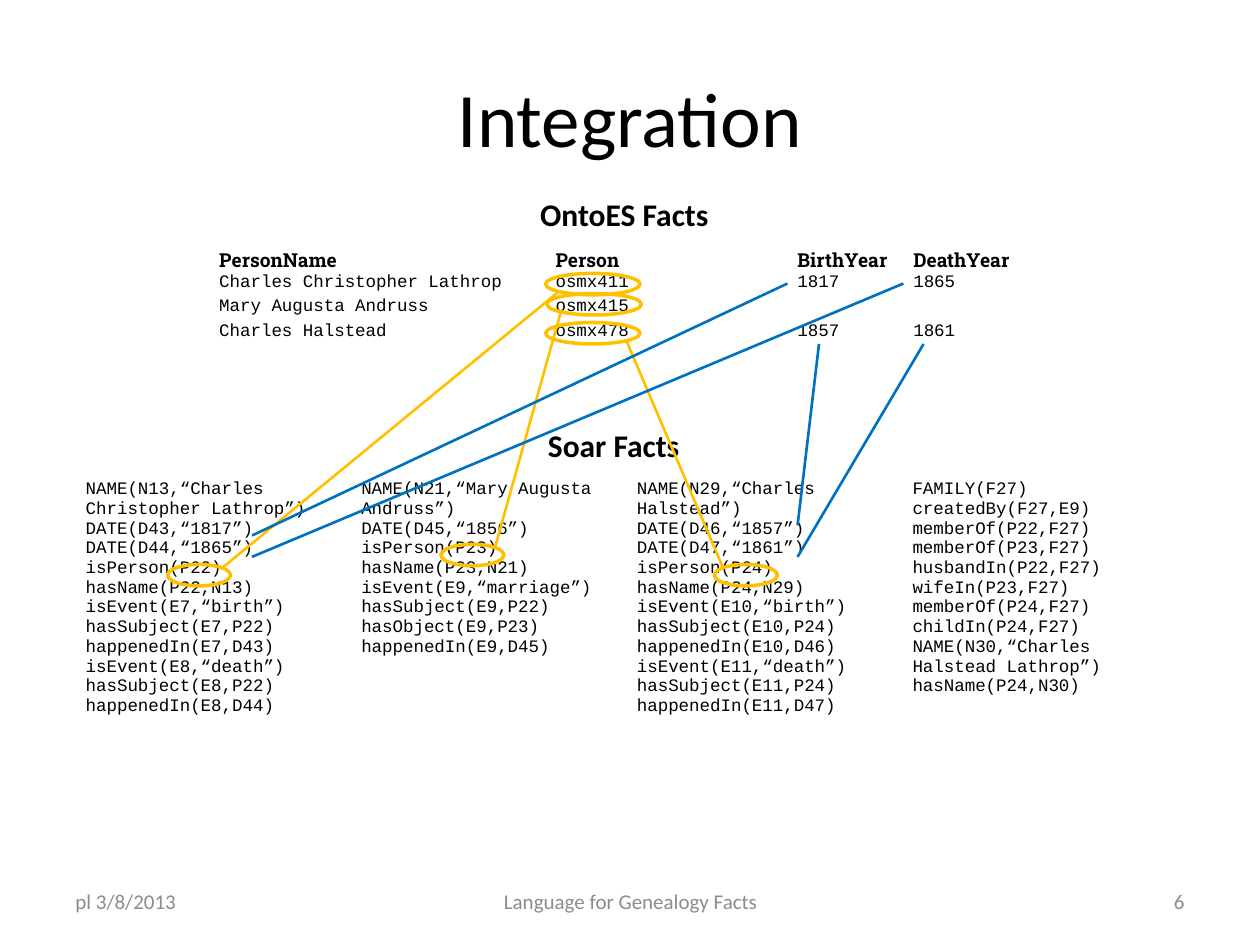
from dataclasses import dataclass

from lxml.etree import SubElement
from pptx import Presentation
from pptx.dml.color import RGBColor
from pptx.enum.shapes import MSO_CONNECTOR, MSO_SHAPE
from pptx.enum.text import MSO_ANCHOR, PP_ALIGN
from pptx.oxml.ns import qn
from pptx.util import Inches, Pt


@dataclass(frozen=True)
class Theme:
    sans: str = "Calibri"
    slab: str = "Roboto Slab"
    mono: str = "Courier New"
    ink: str = "000000"
    gray: str = "8C8C8C"
    gold: str = "FFC000"
    blue: str = "0070C0"
    title: int = 44
    head: int = 18
    foot: int = 12
    label: int = 11
    fact: int = 10
    ring: float = 2
    link: float = 1.5
    grid: str = "{2D5ABB26-0587-4C30-8999-92F81FD0307C}"


class Page:
    def __init__(self, slide, theme):
        self.slide = slide
        self.theme = theme

    def style(self, para, face, size, color, bold=False):
        font = para.font
        font.name = face
        font.size = Pt(size)
        font.bold = bold
        font.color.rgb = RGBColor.from_string(color)

    def text(self, words, box, size, color, align=PP_ALIGN.CENTER,
             anchor=MSO_ANCHOR.MIDDLE, bold=False):
        frame = self.slide.shapes.add_textbox(*map(Inches, box)).text_frame
        frame.word_wrap = True
        frame.vertical_anchor = anchor
        frame.text = words
        para = frame.paragraphs[0]
        para.alignment = align
        self.style(para, self.theme.sans, size, color, bold)

    def table(self, box, cols, rows):
        shape = self.slide.shapes.add_table(len(rows), len(cols), *map(Inches, box))
        table = shape.table
        table.first_row = table.horz_banding = False
        table._tbl.tblPr.find(qn("a:tableStyleId")).text = self.theme.grid
        for col, width in zip(table.columns, cols):
            col.width = Inches(width)
        for row, height in zip(table.rows, rows):
            row.height = Inches(height)
        for cell in table.iter_cells():
            cell.fill.background()
        return table

    def fill(self, cell, words, face, size, bold=False):
        cell.text = words
        for para in cell.text_frame.paragraphs:
            self.style(para, face, size, self.theme.ink, bold)

    def people(self, box, cols, rows, data):
        table = self.table(box, cols, rows)
        for r, line in enumerate(data, 1):
            top = r == 1
            face = self.theme.slab if top else self.theme.mono
            size = self.theme.label if top else self.theme.fact
            for c, words in enumerate(line):
                cell = table.cell(r, c)
                cell.margin_left = cell.margin_right = Inches(0.07)
                cell.margin_top = cell.margin_bottom = 0
                self.fill(cell, words, face, size, top)
                cell.text_frame.paragraphs[0].line_spacing = 1.15

    def facts(self, box, groups):
        width = box[2] / len(groups)
        table = self.table(box, [width] * len(groups), [box[3]])
        for c, group in enumerate(groups):
            self.fill(table.cell(0, c), "\n".join(group), self.theme.mono, self.theme.fact)

    def ring(self, left, top, width):
        shape = self.slide.shapes.add_shape(
            MSO_SHAPE.OVAL, *map(Inches, (left, top, width, 0.17)))
        shape.shadow.inherit = False
        shape.fill.background()
        shape.line.color.rgb = RGBColor.from_string(self.theme.gold)
        shape.line.width = Pt(self.theme.ring)

    def link(self, start, end, color):
        line = self.slide.shapes.add_connector(
            MSO_CONNECTOR.STRAIGHT, *map(Inches, start + end))
        line.line.color.rgb = RGBColor.from_string(color)
        line.line.width = Pt(self.theme.link)
        SubElement(line._element.spPr, qn("a:effectLst"))


PEOPLE = [
    ("PersonName", "Person", "BirthYear", "DeathYear"),
    ("Charles Christopher Lathrop", "osmx411", "1817", "1865"),
    ("Mary Augusta Andruss", "osmx415", "", ""),
    ("Charles Halstead", "osmx478", "1857", "1861"),
]

FACTS = [
    ["NAME(N13,“Charles Christopher Lathrop”)", "DATE(D43,“1817”)",
     "DATE(D44,“1865”)", "isPerson(P22)", "hasName(P22,N13)",
     "isEvent(E7,“birth”)", "hasSubject(E7,P22)", "happenedIn(E7,D43)",
     "isEvent(E8,“death”)", "hasSubject(E8,P22)", "happenedIn(E8,D44)"],
    ["NAME(N21,“Mary Augusta Andruss”)", "DATE(D45,“1856”)",
     "isPerson(P23)", "hasName(P23,N21)", "isEvent(E9,“marriage”)",
     "hasSubject(E9,P22)", "hasObject(E9,P23)", "happenedIn(E9,D45)"],
    ["NAME(N29,“Charles Halstead”)", "DATE(D46,“1857”)",
     "DATE(D47,“1861”)", "isPerson(P24)", "hasName(P24,N29)",
     "isEvent(E10,“birth”)", "hasSubject(E10,P24)", "happenedIn(E10,D46)",
     "isEvent(E11,“death”)", "hasSubject(E11,P24)", "happenedIn(E11,D47)"],
    ["FAMILY(F27)", "createdBy(F27,E9)", "memberOf(P22,F27)",
     "memberOf(P23,F27)", "husbandIn(P22,F27)", "wifeIn(P23,F27)",
     "memberOf(P24,F27)", "childIn(P24,F27)",
     "NAME(N30,“Charles Halstead Lathrop”)", "hasName(P24,N30)"],
]

MATCHES = [
    ((4.33, 2.17), (1.33, 4.48), (4.44, 2.31), (1.76, 4.51)),
    ((4.34, 2.33), (3.5, 4.32), (4.45, 2.48), (3.93, 4.34)),
    ((4.33, 2.56), (5.67, 4.48), (4.97, 2.7), (5.74, 4.51)),
]

DATES = [
    ((2, 4.25), (6.25, 2.25)),
    ((6.33, 4.17), (6.5, 2.73)),
    ((6.33, 4.42), (7.33, 2.73)),
    ((2, 4.42), (7.17, 2.25)),
]


def main():
    deck = Presentation()
    deck.slide_width, deck.slide_height = Inches(10), Inches(7.5)
    theme = Theme()
    page = Page(deck.slides.add_slide(deck.slide_layouts[6]), theme)

    page.text("Integration", (0.5, 0.3, 9, 1.25), theme.title, theme.ink)
    for words, left, width, align in (
        ("pl 3/8/2013", 0.5, 2.33, PP_ALIGN.LEFT),
        ("Language for Genealogy Facts", 3.42, 3.17, PP_ALIGN.CENTER),
        ("6", 7.17, 2.33, PP_ALIGN.RIGHT),
    ):
        page.text(words, (left, 6.95, width, 0.4), theme.foot, theme.gray, align)

    page.text("OntoES Facts", (3.83, 1.5, 2.25, 0.4), theme.head, theme.ink,
              anchor=MSO_ANCHOR.TOP, bold=True)
    page.people((1.67, 1.53, 6.67, 1.2), (2.67, 1.92, 0.92, 1.17),
                (0.38, 0.21, 0.18, 0.2, 0.18), PEOPLE)
    page.text("Soar Facts", (4.25, 3.33, 1.42, 0.4), theme.head, theme.ink,
              PP_ALIGN.LEFT, MSO_ANCHOR.TOP, True)
    page.facts((0.58, 3.76, 8.75, 2.27), FACTS)

    for person, fact, start, end in MATCHES:
        page.ring(*person, 0.75)
        page.ring(*fact, 0.5)
        page.link(start, end, theme.gold)
    for start, end in DATES:
        page.link(start, end, theme.blue)

    deck.save("out.pptx")


if __name__ == "__main__":
    main()
